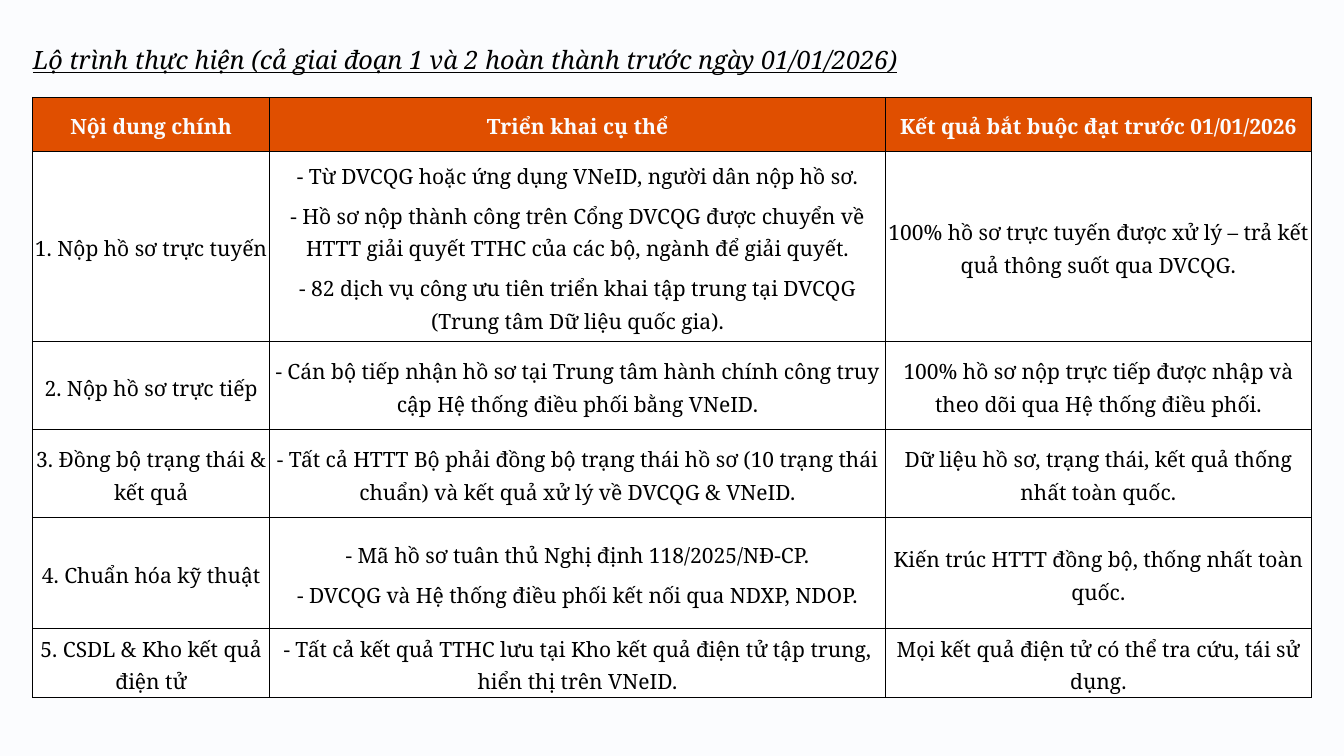
from lxml.etree import SubElement
from pptx import Presentation
from pptx.dml.color import RGBColor
from pptx.enum.text import MSO_ANCHOR as Anchor, MSO_AUTO_SIZE as AutoSize, PP_ALIGN as Align
from pptx.oxml.ns import qn
from pptx.util import Pt

# Content
TITLE = "Lộ trình thực hiện (cả giai đoạn 1 và 2 hoàn thành trước ngày 01/01/2026)"
ROADMAP = [
    (["Nội dung chính"], ["Triển khai cụ thể"], ["Kết quả bắt buộc đạt trước 01/01/2026"]),
    (["1. Nộp hồ sơ trực tuyến"],
     ["- Từ DVCQG hoặc ứng dụng VNeID, người dân nộp hồ sơ.",
      "- Hồ sơ nộp thành công trên Cổng DVCQG được chuyển về HTTT giải quyết TTHC "
      "của các bộ, ngành để giải quyết.",
      "- 82 dịch vụ công ưu tiên triển khai tập trung tại DVCQG (Trung tâm Dữ liệu quốc gia)."],
     ["100% hồ sơ trực tuyến được xử lý – trả kết quả thông suốt qua DVCQG."]),
    (["2. Nộp hồ sơ trực tiếp"],
     ["- Cán bộ tiếp nhận hồ sơ tại Trung tâm hành chính công truy cập "
      "Hệ thống điều phối bằng VNeID."],
     ["100% hồ sơ nộp trực tiếp được nhập và theo dõi qua Hệ thống điều phối."]),
    (["3. Đồng bộ trạng thái & kết quả"],
     ["- Tất cả HTTT Bộ phải đồng bộ trạng thái hồ sơ (10 trạng thái chuẩn) "
      "và kết quả xử lý về DVCQG & VNeID."],
     ["Dữ liệu hồ sơ, trạng thái, kết quả thống nhất toàn quốc."]),
    (["4. Chuẩn hóa kỹ thuật"],
     ["- Mã hồ sơ tuân thủ Nghị định 118/2025/NĐ-CP.",
      "- DVCQG và Hệ thống điều phối kết nối qua NDXP, NDOP."],
     ["Kiến trúc HTTT đồng bộ, thống nhất toàn quốc."]),
    (["5. CSDL & Kho kết quả điện tử"],
     ["- Tất cả kết quả TTHC lưu tại Kho kết quả điện tử tập trung, hiển thị trên VNeID."],
     ["Mọi kết quả điện tử có thể tra cứu, tái sử dụng."]),
]

# Layout and formats
COLUMN_WIDTHS = [203, 528, 365]
ROW_HEIGHTS = [46.5, 163, 75.5, 75.5, 95, 59]
BLACK, WHITE, PALE, ORANGE = "000000", "FFFFFF", "FBFCFE", "E04F00"
FONT = "Noto Serif"
TITLE_FONT = {"name": FONT, "size": Pt(21.6), "italic": True, "underline": True}
HEADER_FONT = {"name": FONT, "size": Pt(18), "bold": True}
BODY_FONT = {"name": FONT, "size": Pt(18), "bold": False}
CELL_FORMAT = {"vertical_anchor": Anchor.MIDDLE, "margin_left": Pt(0.72),
               "margin_right": Pt(0.72), "margin_top": Pt(0.72), "margin_bottom": Pt(0.72)}


def apply(target, values):
    for name, value in values.items():
        setattr(target, name, value)


def paint(fill, color):
    fill.solid()
    fill.fore_color.rgb = RGBColor.from_string(color)


def write(para, text, font, color):
    span = para.add_run()
    span.text = text
    apply(span.font, font)
    paint(span.font.fill, color)


def add_borders(cell):
    properties = cell._tc.get_or_add_tcPr()
    for side in ("a:lnL", "a:lnR", "a:lnT", "a:lnB"):
        line = SubElement(properties, qn(side), w=str(Pt(1)))
        fill = SubElement(line, qn("a:solidFill"))
        SubElement(fill, qn("a:srgbClr"), val=BLACK)


def fill_cell(cell, texts, font, color, background):
    apply(cell, CELL_FORMAT)
    add_borders(cell)
    paint(cell.fill, background)
    frame = cell.text_frame
    for index, text in enumerate(texts):
        para = frame.add_paragraph() if index else frame.paragraphs[0]
        apply(para, {"alignment": Align.CENTER, "line_spacing": 1.15,
                     "space_before": Pt(3 if index else 0), "space_after": Pt(3)})
        write(para, text, font, color)


def main():
    deck = Presentation()
    apply(deck, {"slide_width": Pt(1152), "slide_height": Pt(648)})
    page = deck.slides.add_slide(deck.slide_layouts[6])
    paint(page.background.fill, PALE)

    # Title
    box = page.shapes.add_textbox(Pt(21), Pt(34.5), Pt(765.5), Pt(33))
    apply(box.text_frame, {"word_wrap": False, "auto_size": AutoSize.SHAPE_TO_FIT_TEXT})
    write(box.text_frame.paragraphs[0], TITLE, TITLE_FONT, BLACK)

    # Roadmap table
    table = page.shapes.add_table(len(ROADMAP), len(COLUMN_WIDTHS), Pt(28), Pt(83.5),
                                  Pt(sum(COLUMN_WIDTHS)), Pt(sum(ROW_HEIGHTS))).table
    table.horz_banding = False
    for column, width in zip(table.columns, COLUMN_WIDTHS):
        column.width = Pt(width)
    for index, (row, height, entries) in enumerate(zip(table.rows, ROW_HEIGHTS, ROADMAP)):
        row.height = Pt(height)
        style = (BODY_FONT, BLACK, WHITE) if index else (HEADER_FONT, PALE, ORANGE)
        for cell, texts in zip(row.cells, entries):
            fill_cell(cell, texts, *style)

    deck.save("out.pptx")


if __name__ == "__main__":
    main()
